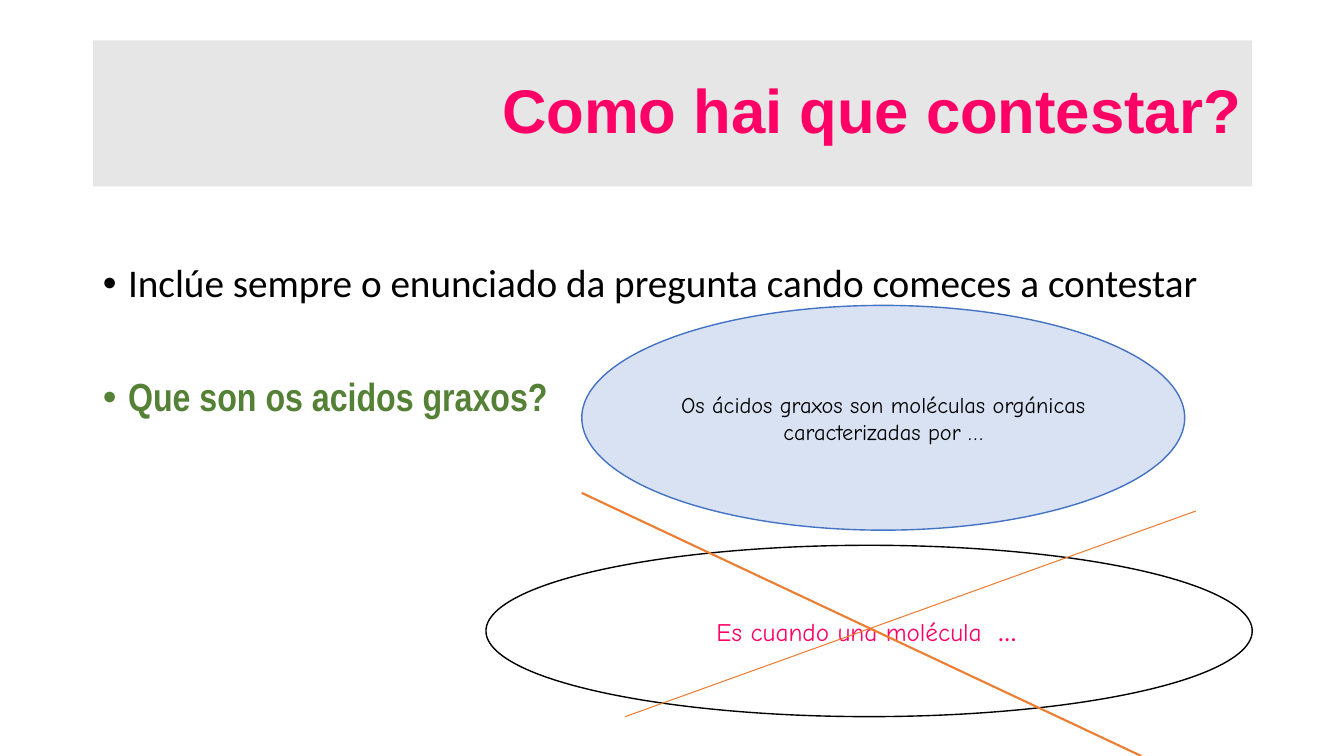
from lxml import etree
from pptx import Presentation
from pptx.dml.color import RGBColor
from pptx.enum.shapes import MSO_CONNECTOR, MSO_SHAPE
from pptx.enum.text import MSO_ANCHOR, MSO_AUTO_SIZE, PP_ALIGN
from pptx.oxml.ns import qn
from pptx.util import Inches, Pt

STRAIGHT = MSO_CONNECTOR.STRAIGHT
ELLIPSE = MSO_SHAPE.OVAL
MIDDLE, TOP = MSO_ANCHOR.MIDDLE, MSO_ANCHOR.TOP
LEFT, CENTER, RIGHT = PP_ALIGN.LEFT, PP_ALIGN.CENTER, PP_ALIGN.RIGHT

PAGE_WIDTH, PAGE_HEIGHT = 13.33, 7.5
MARGIN, CONTENT_WIDTH = 0.92, 11.5
PINK, BLACK, GREEN, ORANGE = "FF0066", "000000", "548135", "ED7D31"


def color(hex_code):
    return RGBColor.from_string(hex_code)


def place(box, left, top, width, height):
    box.left, box.top = Inches(left), Inches(top)
    box.width, box.height = Inches(width), Inches(height)


def set_frame(box, anchor):
    frame = box.text_frame
    frame.word_wrap = True
    frame.auto_size = MSO_AUTO_SIZE.NONE
    frame.vertical_anchor = anchor
    frame.margin_left = frame.margin_right = Inches(0.1)
    frame.margin_top = frame.margin_bottom = Inches(0.05)
    return frame


def add_span(para, text, size, font, hex_code, bold=False):
    span = para.add_run()
    span.text = text
    span.font.size = Pt(size)
    span.font.name = font
    span.font.bold = bold
    span.font.color.rgb = color(hex_code)


def fill_title(title, text):
    place(title, MARGIN, 0.4, CONTENT_WIDTH, 1.45)
    title.fill.solid()
    title.fill.fore_color.rgb = color("E7E6E6")
    para = set_frame(title, MIDDLE).paragraphs[0]
    para.alignment = RIGHT
    para.line_spacing = 0.9
    add_span(para, text, 44, "Arial", PINK, bold=True)


def fill_body(body, items):
    """Write one bullet per item, set apart by wide paragraph spacing."""
    place(body, MARGIN, 2, CONTENT_WIDTH, 4.76)
    frame = set_frame(body, TOP)
    frame.margin_top = Inches(0.62)
    for index, (text, font, hex_code, bold) in enumerate(items):
        para = frame.add_paragraph() if index else frame.paragraphs[0]
        para.alignment = LEFT
        para.line_spacing = 0.9
        para.space_before = Pt(51 if index else 0)
        properties = para._p.get_or_add_pPr()
        properties.set("marL", str(Inches(0.25)))
        properties.set("indent", str(-Inches(0.25)))
        add_span(para, text, 28, font, hex_code, bold)


def add_ellipse(page, area, fill, line, spans):
    box = page.shapes.add_shape(ELLIPSE, *map(Inches, area))
    box.shadow.inherit = False
    box.fill.solid()
    box.fill.fore_color.rgb = color(fill)
    box.line.color.rgb = color(line)
    box.line.width = Pt(1)
    para = set_frame(box, MIDDLE).paragraphs[0]
    para.alignment = CENTER
    for span in spans:
        add_span(para, *span)


def add_strike(page, start, end, width):
    strike = page.shapes.add_connector(STRAIGHT, *map(Inches, start + end))
    strike.line.color.rgb = color(ORANGE)
    strike.line.width = Pt(width)
    etree.SubElement(strike._element.spPr, qn("a:effectLst"))


def main():
    deck = Presentation()
    deck.slide_width, deck.slide_height = Inches(PAGE_WIDTH), Inches(PAGE_HEIGHT)
    page = deck.slides.add_slide(deck.slide_layouts[1])

    fill_title(page.shapes.title, "Como hai que contestar?")
    fill_body(page.placeholders[1], [
        ("Inclúe sempre o enunciado da pregunta cando comeces a contestar",
         "Calibri", BLACK, False),
        ("Que son os acidos graxos?", "Arial Narrow", GREEN, True),
    ])

    add_ellipse(page, (5.77, 3.03, 5.98, 2.23), "D8E2F3", "4472C4", [
        ("Os ácidos graxos son moléculas orgánicas caracterizadas por …",
         16, "Comic Neue", BLACK),
    ])
    add_ellipse(page, (4.82, 5.41, 7.6, 1.7), "FFFFFF", BLACK, [
        ("Es cuando una molécula  ", 18, "Comic Neue", PINK),
        ("… ", 18, "Calibri", PINK),
    ])

    add_strike(page, (5.77, 4.89), (11.32, PAGE_HEIGHT), 1.5)
    add_strike(page, (6.2, 7.11), (11.86, 5.07), 0.75)

    deck.save("out.pptx")


if __name__ == "__main__":
    main()
